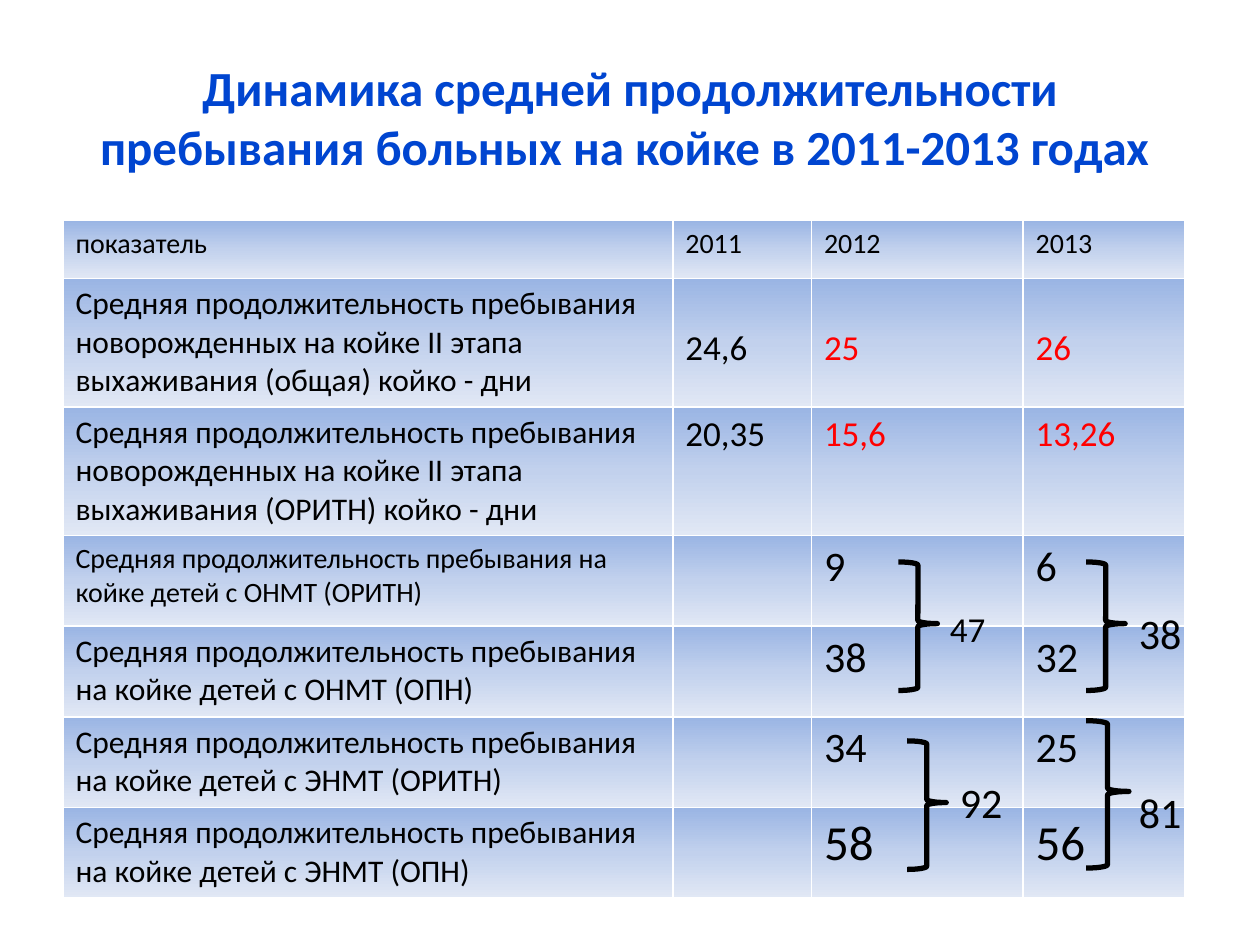
from lxml import etree
from pptx import Presentation
from pptx.dml.color import RGBColor
from pptx.enum import shapes, text
from pptx.oxml import parse_xml
from pptx.oxml.ns import nsdecls
from pptx.util import Inches, Pt

BLUE = RGBColor(0x00, 0x45, 0xD0)
BLACK = RGBColor(0, 0, 0)
RED = RGBColor(0xFF, 0, 0)
WHITE = RGBColor(0xFF, 0xFF, 0xFF)
SHADES = [(0, RGBColor(0x9A, 0xB5, 0xE4)),
          (50, RGBColor(0xC2, 0xD1, 0xED)),
          (100, RGBColor(0xE1, 0xE8, 0xF5))]
FONT = "Calibri"

STAY = "Средняя продолжительность пребывания "
NEWBORN = STAY + "новорожденных на койке II этапа выхаживания "
CHILD = STAY + "на койке детей с "
COLS = [4.84, 1.1, 1.68, 1.28]
# Height, label size, value size, colour of 2012-2013, texts
ROWS = [
    (0.46, 16, 16, BLACK, ["показатель", "2011", "2012", "2013"]),
    (1.02, 18, 20, RED, [NEWBORN + "(общая) койко - дни", "24,6", "25", "26"]),
    (1.02, 18, 20, RED, [NEWBORN + "(ОРИТН) койко - дни", "20,35", "15,6", "13,26"]),
    (0.72, 16, 24, BLACK, [CHILD + "ОНМТ (ОРИТН)", "", "9", "6"]),
    (0.72, 18, 24, BLACK, [CHILD + "ОНМТ (ОПН)", "", "38", "32"]),
    (0.72, 18, 24, BLACK, [CHILD + "ЭНМТ (ОРИТН)", "", "34", "25"]),
    (0.72, 18, 28, BLACK, [CHILD + "ЭНМТ (ОПН)", "", "58", "56"]),
]
LOWERED = 1  # row whose values sit one line lower

# Brace box, sum, size of sum, place of sum
SUMS = [
    ((7.13, 4.46, 0.31, 1.02), "47", 20, (7.44, 4.77)),
    ((8.62, 4.46, 0.31, 1.02), "38", 24, (8.94, 4.77)),
    ((7.2, 5.88, 0.31, 1.02), "92", 24, (7.52, 6.11)),
    ((8.62, 5.72, 0.34, 1.17), "81", 24, (8.94, 6.19)),
]


def add_run(para, words, size, color, bold=False):
    run = para.add_run()
    run.text = words
    font = run.font
    font.name, font.size, font.bold = FONT, Pt(size), bold
    font.color.rgb = color


def add_text(slide, box, words, size, color, bold=False):
    frame = slide.shapes.add_textbox(*map(Inches, box)).text_frame
    frame.word_wrap = True
    add_run(frame.paragraphs[0], words, size, color, bold)
    return frame


def add_title(slide, box):
    frame = add_text(
        slide, box,
        "Динамика средней продолжительности пребывания больных на койке в 2011-2013 годах ",
        28, BLUE, True)
    frame.vertical_anchor = text.MSO_ANCHOR.MIDDLE
    frame.paragraphs[0].alignment = text.PP_ALIGN.CENTER


def paint_cell(cell):
    # White borders come before the gradient in the cell properties
    props = cell._tc.get_or_add_tcPr()
    for side in "LRTB":
        props.append(parse_xml(
            f'<a:ln{side} {nsdecls("a")} w="{Pt(1)}"><a:solidFill>'
            f'<a:srgbClr val="{WHITE}"/></a:solidFill></a:ln{side}>'))
    stops = "".join(f'<a:gs pos="{pos * 1000}"><a:srgbClr val="{color}"/></a:gs>'
                    for pos, color in SHADES)
    props.append(parse_xml(
        f'<a:gradFill {nsdecls("a")} rotWithShape="1"><a:gsLst>{stops}</a:gsLst>'
        '<a:lin ang="5400000" scaled="0"/></a:gradFill>'))


def add_table(slide, box):
    frame = slide.shapes.add_table(len(ROWS), len(COLS), *map(Inches, box))
    table = frame.table
    table.first_row = table.horz_banding = False
    for col, width in zip(table.columns, COLS):
        col.width = Inches(width)
    for r, (height, label, value, color, words) in enumerate(ROWS):
        table.rows[r].height = Inches(height)
        for c, word in enumerate(words):
            cell = table.cell(r, c)
            paint_cell(cell)
            if r == LOWERED and c:
                cell.margin_top = Inches(0.39)
            if word:
                add_run(cell.text_frame.paragraphs[0], word,
                        value if c else label, color if c > 1 else BLACK)


def add_sum(slide, box, word, size, place):
    brace = slide.shapes.add_shape(
        shapes.MSO_SHAPE.RIGHT_BRACE, *map(Inches, box))
    brace.shadow.inherit = False
    brace.adjustments[0], brace.adjustments[1] = 0.08, 0.48
    brace.fill.background()
    brace.line.color.rgb = BLACK
    brace.line.width = Pt(3)
    add_text(slide, (*place, 0.55, 0.5), word, size, BLACK)


def main():
    deck = Presentation()
    deck.slide_width, deck.slide_height = Inches(10), Inches(7.5)
    slide = deck.slides.add_slide(deck.slide_layouts[6])
    add_title(slide, (0.5, 0.3, 9, 1.25))
    add_table(slide, (0.5, 1.75, sum(COLS), sum(row[0] for row in ROWS)))
    for item in SUMS:
        add_sum(slide, *item)
    deck.save("out.pptx")


if __name__ == "__main__":
    main()
